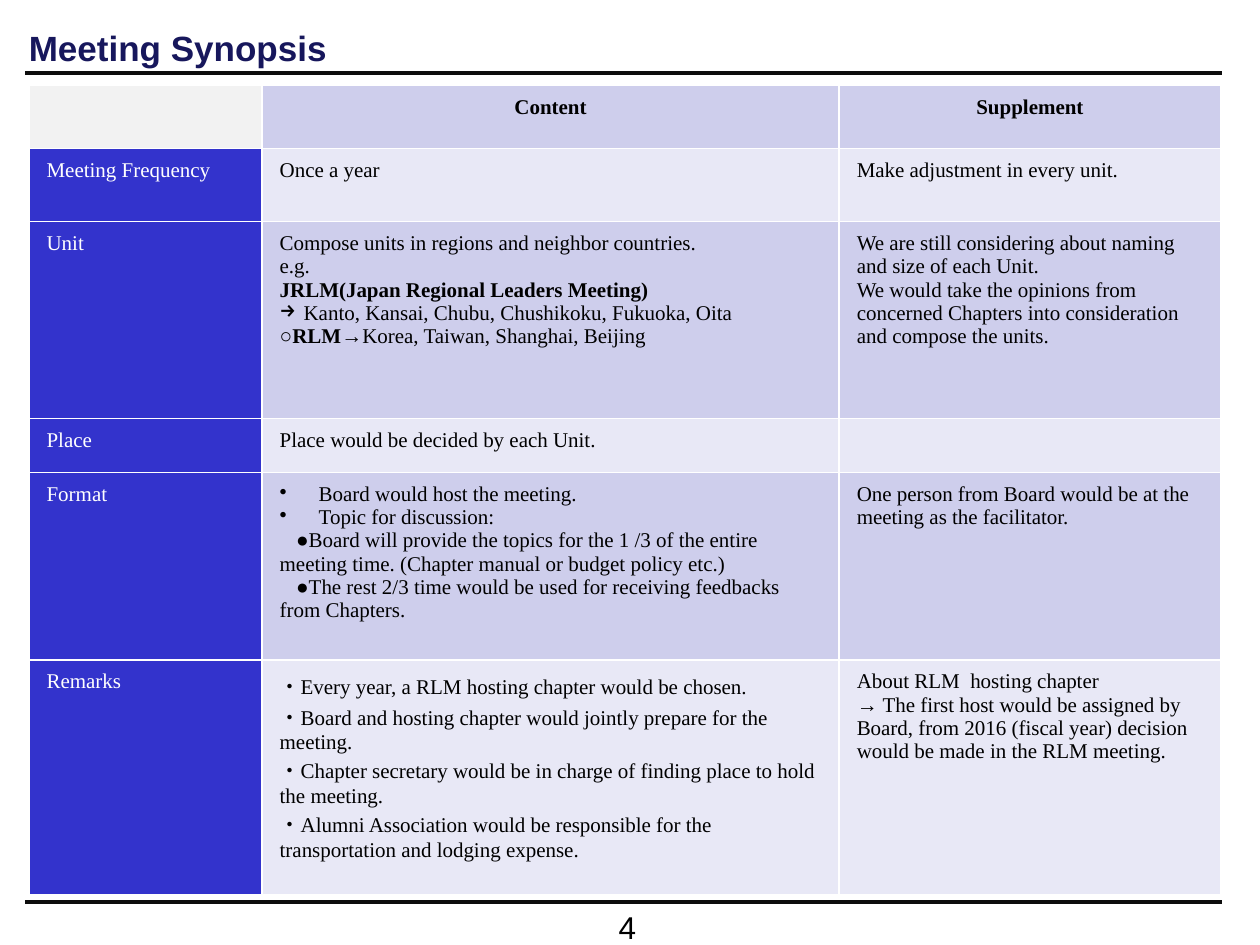
import dataclasses

import pptx
import pptx.dml.color
import pptx.enum.shapes
import pptx.enum.text
import pptx.oxml.ns
import pptx.util
from lxml import etree

SLIDE_WIDTH, SLIDE_HEIGHT = 10, 7.5
LEFT, CENTER = pptx.enum.text.PP_ALIGN.LEFT, pptx.enum.text.PP_ALIGN.CENTER
TOP, BOTTOM = pptx.enum.text.MSO_ANCHOR.TOP, pptx.enum.text.MSO_ANCHOR.BOTTOM


@dataclasses.dataclass(frozen=True)
class Theme:
    heading_font: str = "Arial"
    body_font: str = "Times New Roman"
    title_size: int = 20
    number_size: int = 18
    body_size: int = 12
    title: str = "17175C"
    ink: str = "000000"
    white: str = "FFFFFF"
    rule: str = "0D0D0D"
    corner: str = "F2F2F2"
    label: str = "3333CC"
    dark_band: str = "CECEEC"
    light_band: str = "E8E8F6"


@dataclasses.dataclass(frozen=True)
class Line:
    runs: tuple
    bullet: str = ""
    hanging: float = 0
    first_indent: float = 0


THEME = Theme()
COLUMNS = [1.85, 4.58, 3.03]
ROWS = [0.5, 0.58, 1.56, 0.43, 1.49, 1.86]


def line(text, bold=False, **layout):
    return Line(((text, bold),), **layout)


SYNOPSIS = [
    ([], [line("Content", True)], [line("Supplement", True)]),
    ([line("Meeting Frequency")], [line("Once a year")],
     [line("Make adjustment in every unit.")]),
    ([line("Unit")],
     [line("Compose units in regions and neighbor countries."),
      line("e.g."),
      line("JRLM(Japan Regional Leaders Meeting)", True),
      line("Kanto, Kansai, Chubu, Chushikoku, Fukuoka, Oita", bullet="→", hanging=0.19),
      Line((("○RLM", True), ("→Korea, Taiwan, Shanghai, Beijing", False)))],
     [line("We are still considering about naming and size of each Unit."),
      line("We would take the opinions from concerned Chapters into consideration "
           "and compose the units.")]),
    ([line("Place")], [line("Place would be decided by each Unit.")], []),
    ([line("Format")],
     [line("Board would host the meeting.", bullet="•", hanging=0.31),
      line("Topic for discussion:", bullet="•", hanging=0.31),
      line("●Board will provide the topics for the 1 /3 of the entire meeting time. "
           "(Chapter manual or budget policy etc.)", first_indent=0.13),
      line("●The rest 2/3 time would be used for receiving feedbacks from Chapters.",
           first_indent=0.13)],
     [line("One person from Board would be at the meeting as the facilitator.")]),
    ([line("Remarks")],
     [line("・Every year, a RLM hosting chapter would be chosen."),
      line("・Board and hosting chapter would jointly prepare for the meeting."),
      line("・Chapter secretary would be in charge of finding place to hold the meeting."),
      line("・Alumni Association would be responsible for the transportation "
           "and lodging expense.")],
     [line("About RLM  hosting chapter"),
      line("→ The first host would be assigned by Board, from 2016 (fiscal year) "
           "decision would be made in the RLM meeting.")]),
]


def inches(*lengths):
    return [pptx.util.Inches(length) for length in lengths]


def rgb(color):
    return pptx.dml.color.RGBColor.from_string(color)


def child(parent, tag, **attributes):
    return etree.SubElement(parent, pptx.oxml.ns.qn(tag), **attributes)


def add_run(paragraph, text, font, size, color, bold=False):
    run = paragraph.add_run()
    run.text = text
    run.font.name = font
    run.font.size = pptx.util.Pt(size)
    run.font.bold = bold
    run.font.color.rgb = rgb(color)


def add_label(slide, box, text, size, color, align, anchor, bold=False, inset=0.05):
    frame = slide.shapes.add_textbox(*inches(*box)).text_frame
    frame.word_wrap = True
    frame.vertical_anchor = anchor
    frame.margin_top = pptx.util.Inches(inset)
    paragraph = frame.paragraphs[0]
    paragraph.alignment = align
    add_run(paragraph, text, THEME.heading_font, size, color, bold)


def add_rule(slide, y):
    margin = 0.02 * SLIDE_WIDTH
    rule = slide.shapes.add_connector(
        pptx.enum.shapes.MSO_CONNECTOR.STRAIGHT,
        *inches(margin, y, 0.97 * SLIDE_WIDTH, y))
    rule.line.color.rgb = rgb(THEME.rule)
    rule.line.width = pptx.util.Pt(2.25)
    child(rule._element.spPr, "a:effectLst")


def indent(paragraph, entry):
    properties = paragraph._p.get_or_add_pPr()
    properties.set("marL", str(pptx.util.Inches(entry.hanging)))
    properties.set("indent", str(pptx.util.Inches(entry.first_indent - entry.hanging)))
    if entry.bullet:
        child(properties, "a:buChar", char=entry.bullet)


def style_cell(cell, fill):
    properties = cell._tc.get_or_add_tcPr()
    for side in ("a:lnL", "a:lnR", "a:lnT", "a:lnB"):
        border = child(properties, side, w=str(pptx.util.Pt(1)))
        child(child(border, "a:solidFill"), "a:srgbClr", val=THEME.white)
    cell.fill.solid()
    cell.fill.fore_color.rgb = rgb(fill)


def write_cell(cell, entries, color, align):
    cell.margin_left = cell.margin_right = pptx.util.Inches(0.14)
    cell.margin_top = cell.margin_bottom = pptx.util.Inches(0.08)
    frame = cell.text_frame
    for index, entry in enumerate(entries):
        paragraph = frame.add_paragraph() if index else frame.paragraphs[0]
        paragraph.alignment = align
        indent(paragraph, entry)
        for text, bold in entry.runs:
            add_run(paragraph, text, THEME.body_font, THEME.body_size, color, bold)


def cell_fill(row, column):
    if column == 0:
        return THEME.label if row else THEME.corner
    return THEME.light_band if row % 2 else THEME.dark_band


def add_synopsis(slide):
    table = slide.shapes.add_table(
        len(ROWS), len(COLUMNS), *inches(0.23, 0.68, sum(COLUMNS), sum(ROWS))).table
    table.first_row = table.horz_banding = False
    for column, width in zip(table.columns, COLUMNS):
        column.width = pptx.util.Inches(width)
    for r, (row, height) in enumerate(zip(table.rows, ROWS)):
        row.height = pptx.util.Inches(height)
        for c, cell in enumerate(row.cells):
            style_cell(cell, cell_fill(r, c))
            if SYNOPSIS[r][c]:
                write_cell(cell, SYNOPSIS[r][c], THEME.ink if c else THEME.white,
                           LEFT if r else CENTER)


def main():
    deck = pptx.Presentation()
    deck.slide_width, deck.slide_height = inches(SLIDE_WIDTH, SLIDE_HEIGHT)
    slide = deck.slides.add_slide(deck.slide_layouts[6])
    for y in (7.16, 0.58):
        add_rule(slide, y)
    add_label(slide, (3.94, 7.06, 2.08, 0.5), "4", THEME.number_size, THEME.ink,
              CENTER, BOTTOM)
    add_label(slide, (0.13, 0.13, 8.69, 0.41), "Meeting Synopsis", THEME.title_size,
              THEME.title, LEFT, TOP, bold=True, inset=0.08)
    add_synopsis(slide)
    deck.save("out.pptx")


if __name__ == "__main__":
    main()
